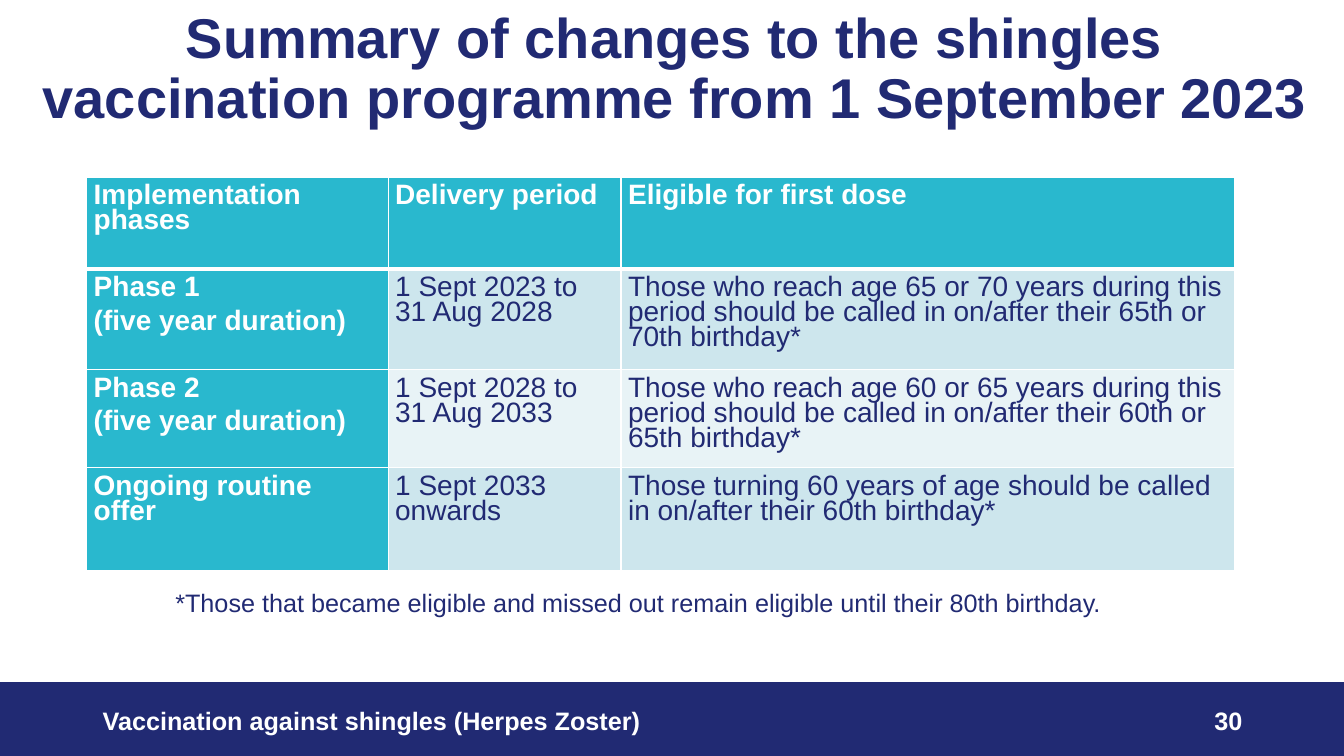
from lxml.etree import SubElement
from pptx import Presentation
from pptx.dml.color import RGBColor
from pptx.enum.shapes import MSO_SHAPE as Shape
from pptx.enum.text import MSO_ANCHOR as Anchor, PP_ALIGN as Align
from pptx.oxml.ns import qn
from pptx.util import Inches, Pt

NAVY = RGBColor(0x21, 0x2A, 0x73)
TEAL = RGBColor(0x29, 0xB8, 0xCE)
PALE = RGBColor(0xCD, 0xE6, 0xED)
LIGHT = RGBColor(0xE8, 0xF3, 0xF6)
WHITE = RGBColor(0xFF, 0xFF, 0xFF)


def write(frame, text, size=18, color=NAVY, bold=False, align=Align.LEFT,
          line=None, after=None):
    """Fill a text frame, one paragraph for each line of text."""
    frame.word_wrap = True
    for i, part in enumerate(text.split("\n")):
        para = frame.add_paragraph() if i else frame.paragraphs[0]
        para.alignment = align
        para.line_spacing = line
        para.space_after = after
        run = para.add_run()
        run.text = part
        font = run.font
        font.name, font.size, font.bold = "Arial", Pt(size), bold
        font.color.rgb = color


def edge(cell, widths):
    """Draw white borders; widths in points: left, right, top, bottom."""
    props = cell._tc.get_or_add_tcPr()
    for i, (side, width) in enumerate(zip("LRTB", widths)):
        line = SubElement(props, qn(f"a:ln{side}"), w=str(Pt(width)))
        fill = SubElement(line, qn("a:solidFill"))
        SubElement(fill, qn("a:srgbClr"), val=str(WHITE))
        props.insert(i, line)


deck = Presentation()
deck.slide_width, deck.slide_height = Inches(13.33), Inches(7.5)
slide = deck.slides.add_slide(deck.slide_layouts[6])
shapes = slide.shapes

# Footer band
band = shapes.add_shape(Shape.RECTANGLE, 0, Inches(6.77), Inches(13.33), Inches(0.73))
band.shadow.inherit = False
band.fill.solid()
band.fill.fore_color.rgb = NAVY
band.line.color.rgb = NAVY
band.line.width = Pt(1)

# Title
title = shapes.add_textbox(Inches(0.16), 0, Inches(13.05), Inches(0.96))
title.text_frame.margin_top = Inches(0.1)
write(title.text_frame,
      "Summary of changes to the shingles vaccination programme from 1 September 2023",
      size=40, bold=True, align=Align.CENTER, line=0.9)

# Footer texts and footnote
notes = [
    (0.92, 6.95, 8, "Vaccination against shingles (Herpes Zoster)",
     dict(color=WHITE, bold=True)),
    (9.42, 6.95, 3, "30", dict(color=WHITE, bold=True, align=Align.RIGHT)),
    (1.64, 5.78, 10.61,
     "*Those that became eligible and missed out remain eligible until their 80th birthday.",
     {}),
]
for left, top, width, text, style in notes:
    box = shapes.add_textbox(Inches(left), Inches(top), Inches(width), Inches(0.4))
    box.text_frame.vertical_anchor = Anchor.MIDDLE
    write(box.text_frame, text, **style)

# Phases table
rows = [
    ("Implementation phases", "Delivery period", "Eligible for first dose"),
    ("Phase 1\n(five year duration)", "1 Sept 2023 to 31 Aug 2028",
     "Those who reach age 65 or 70 years during this period should be called in "
     "on/after their 65th or 70th birthday*"),
    ("Phase 2\n(five year duration)", "1 Sept 2028 to 31 Aug 2033",
     "Those who reach age 60 or 65 years during this period should be called in "
     "on/after their 60th or 65th birthday*"),
    ("Ongoing routine offer", "1 Sept 2033 onwards",
     "Those turning 60 years of age should be called in on/after their 60th birthday*"),
]
table = shapes.add_table(4, 3, Inches(0.86), Inches(1.76),
                         Inches(11.39), Inches(3.9)).table
for col, width in zip(table.columns, (2.99, 2.31, 6.09)):
    col.width = Inches(width)
for row, height in zip(table.rows, (0.91, 1, 0.97, 1.02)):
    row.height = Inches(height)
for r, texts in enumerate(rows):
    for c, text in enumerate(texts):
        cell = table.cell(r, c)
        head = r == 0 or c == 0
        cell.margin_left = cell.margin_right = Inches(0.07)
        cell.margin_top = cell.margin_bottom = Inches(0.08)
        cell.fill.solid()
        cell.fill.fore_color.rgb = TEAL if head else PALE if r % 2 else LIGHT
        edge(cell, (1, 1, 3 if r == 1 else 1, 3 if r == 0 else 1))
        write(cell.text_frame, text, size=20, color=WHITE if head else NAVY,
              bold=head, line=Pt(18), after=Pt(6))

deck.save("out.pptx")
